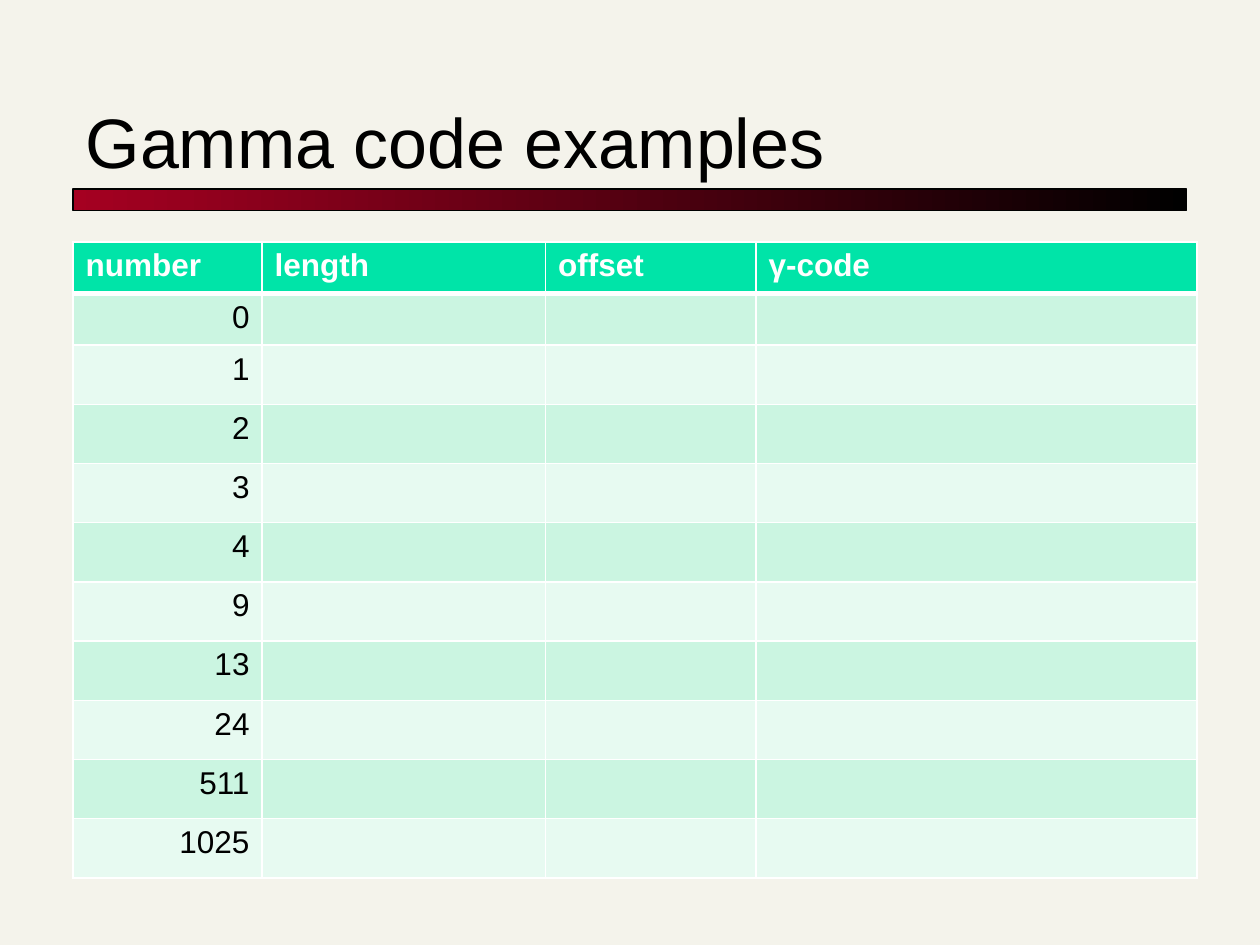
from lxml import etree
from pptx import Presentation
from pptx.dml.color import RGBColor
from pptx.enum.shapes import MSO_SHAPE
from pptx.enum.text import MSO_ANCHOR, MSO_AUTO_SIZE, PP_ALIGN
from pptx.oxml.ns import qn
from pptx.util import Inches, Pt

RECTANGLE = MSO_SHAPE.RECTANGLE
BOTTOM = MSO_ANCHOR.BOTTOM
NO_AUTOFIT = MSO_AUTO_SIZE.NONE
LEFT, RIGHT = PP_ALIGN.LEFT, PP_ALIGN.RIGHT
TITLE_ONLY = 5

MARGIN = 0.58
HEADINGS = ["number", "length", "offset", "γ-code"]
NUMBERS = [0, 1, 2, 3, 4, 9, 13, 24, 511, 1025]
COLUMN_WIDTHS = [1.5, 2.25, 1.67, 3.5]
ROW_HEIGHTS = [0.41] * 2 + [0.47] * 9
HEADER_FILL = "00E4A8"
BAND_FILLS = ["E7FAF1", "CBF5E1"]

TITLE_FORMAT = {"name": "Arial", "size": Pt(40), "bold": False}
HEADER_FORMAT = {"name": "Arial", "size": Pt(18), "bold": True}
NUMBER_FORMAT = {**HEADER_FORMAT, "bold": False}


def color(hex_value):
    return RGBColor.from_string(hex_value)


def write_text(frame, text, formats, hex_value, alignment):
    para = frame.paragraphs[0]
    para.alignment = alignment
    span = para.add_run()
    span.text = text
    for name, value in formats.items():
        setattr(span.font, name, value)
    span.font.color.rgb = color(hex_value)


def place(shape, left, top, width, height):
    box = {"left": left, "top": top, "width": width, "height": height}
    for name, value in box.items():
        setattr(shape, name, Inches(value))


def add_title(page, text):
    title = page.shapes.title
    place(title, MARGIN, 0.42, 8.83, 1.08)
    frame = title.text_frame
    frame.auto_size = NO_AUTOFIT
    frame.vertical_anchor = BOTTOM
    write_text(frame, text, TITLE_FORMAT, "000000", LEFT)


def add_gradient_bar(page):
    bar = page.shapes.add_shape(
        RECTANGLE, Inches(MARGIN), Inches(1.5), Inches(8.84), Inches(0.17))
    bar.shadow.inherit = False
    bar.fill.gradient()
    bar.fill.gradient_angle = 0
    for stop, position, hex_value in zip(
            bar.fill.gradient_stops, (0, 1), ("A50021", "000000")):
        stop.position = position
        stop.color.rgb = color(hex_value)
    bar.line.color.rgb = color("000000")
    bar.line.width = Pt(0.75)


def set_borders(cell, widths):
    """Draw white cell borders; widths maps the sides L, R, T, B to points."""
    properties = cell._tc.get_or_add_tcPr()
    for side, width in widths.items():
        line = etree.SubElement(properties, qn(f"a:ln{side}"), w=str(Pt(width)))
        fill = etree.SubElement(line, qn("a:solidFill"))
        etree.SubElement(fill, qn("a:srgbClr"), val="FFFFFF")


def style_cell(cell, row):
    set_borders(cell, {"L": 1, "R": 1,
                       "T": 3 if row == 1 else 1,
                       "B": 3 if row == 0 else 1})
    cell.fill.solid()
    cell.fill.fore_color.rgb = color(BAND_FILLS[row % 2] if row else HEADER_FILL)


def add_code_table(page):
    table = page.shapes.add_table(
        len(ROW_HEIGHTS), len(COLUMN_WIDTHS), Inches(MARGIN), Inches(1.92),
        Inches(sum(COLUMN_WIDTHS)), Inches(sum(ROW_HEIGHTS))).table
    for column, width in zip(table.columns, COLUMN_WIDTHS):
        column.width = Inches(width)
    for index, height in enumerate(ROW_HEIGHTS):
        table.rows[index].height = Inches(height)
        for cell in table.rows[index].cells:
            style_cell(cell, index)
    for index, heading in enumerate(HEADINGS):
        write_text(table.cell(0, index).text_frame, heading,
                   HEADER_FORMAT, "FFFFFF", LEFT)
    for index, number in enumerate(NUMBERS, start=1):
        write_text(table.cell(index, 0).text_frame, str(number),
                   NUMBER_FORMAT, "000000", RIGHT)


def main():
    deck = Presentation()
    deck.slide_width, deck.slide_height = Inches(10), Inches(7.5)
    page = deck.slides.add_slide(deck.slide_layouts[TITLE_ONLY])
    page.background.fill.solid()
    page.background.fill.fore_color.rgb = color("F4F3EB")
    add_gradient_bar(page)
    add_title(page, "Gamma code examples")
    add_code_table(page)
    deck.save("out.pptx")


if __name__ == "__main__":
    main()
